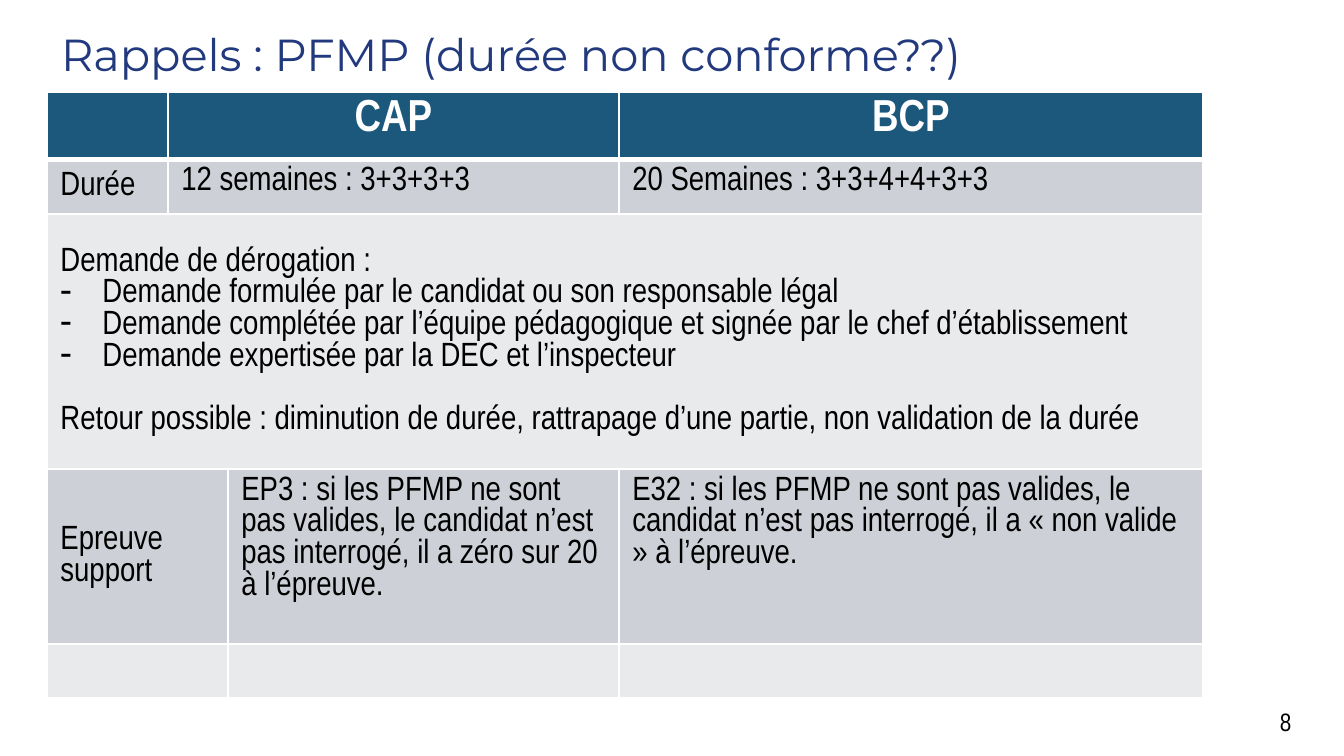
from lxml.etree import SubElement as Sub
from pptx import Presentation
from pptx.dml.color import RGBColor as Rgb
from pptx.enum.text import MSO_ANCHOR as Anchor, PP_ALIGN as Align
from pptx.oxml.ns import qn
from pptx.util import Pt

PX = 914400 / 134.4
HUES = {"title": "223A7D", "head": "1B587C", "dark": "CDD1D7",
        "light": "E8EAEC", "white": "FFFFFF", "black": "000000"}
BODY = "Arial Narrow"

COLS = [121, 60, 391, 584]
ROWS = [66, 55, 255, 175, 54]
BANDS = ["head", "dark", "light", "dark", "light"]
# first row, first column, last row, last column
SPANS = [(0, 1, 0, 2), (1, 1, 1, 2), (2, 0, 2, 3), (3, 0, 3, 1), (4, 0, 4, 1)]
CELLS = {
    (0, 1): "CAP",
    (0, 3): "BCP",
    (1, 0): "Durée",
    (1, 1): "12 semaines : 3+3+3+3",
    (1, 3): "20 Semaines : 3+3+4+4+3+3",
    (3, 0): "Epreuve support",
    (3, 2): "EP3 : si les PFMP ne sont pas valides, le candidat n’est pas "
            "interrogé, il a zéro sur 20 à l’épreuve.",
    (3, 3): "E32 : si les PFMP ne sont pas valides, le candidat n’est pas "
            "interrogé, il a « non valide » à l’épreuve.",
}
MIDDLE = [(1, 0), (2, 0), (3, 0)]
WAIVER = "Demande de dérogation :"
STEPS = [
    "Demande formulée par le candidat ou son responsable légal",
    "Demande complétée par l’équipe pédagogique et signée par le chef "
    "d’établissement",
    "Demande expertisée par la DEC et l’inspecteur",
]
RESULT = ("Retour possible : diminution de durée, rattrapage d’une partie, "
          "non validation de la durée")


def emu(px):
    return round(px * PX)


def write(para, text, size, hue="black", face=BODY, bold=False, align=None):
    run = para.add_run()
    run.text = text
    font = run.font
    font.name, font.size, font.bold = face, Pt(size), bold
    font.color.rgb = Rgb.from_string(HUES[hue])
    para.alignment = align


def label(slide, box, text, size, **look):
    frame = slide.shapes.add_textbox(*map(emu, box)).text_frame
    frame.word_wrap = True
    write(frame.paragraphs[0], text, size, **look)


def dash(para):
    """Give the paragraph a hanging dash."""
    props = para._p.get_or_add_pPr()
    props.set("marL", str(emu(42)))
    props.set("indent", str(-emu(42)))
    Sub(props, qn("a:buFontTx"))
    Sub(props, qn("a:buChar"), char="-")


def edge(cell, row):
    """Draw white borders, thicker between the head and the body."""
    props = cell._tc.get_or_add_tcPr()
    for side in "LRTB":
        thick = (row, side) in [(0, "B"), (1, "T")]
        line = Sub(props, qn(f"a:ln{side}"), w=str(Pt(3 if thick else 1)))
        fill = Sub(line, qn("a:solidFill"))
        Sub(fill, qn("a:srgbClr"), val=HUES["white"])


def waiver(frame):
    write(frame.paragraphs[0], WAIVER, 18)
    for step in STEPS:
        para = frame.add_paragraph()
        dash(para)
        write(para, step, 18)
    para = frame.add_paragraph()
    para.space_before = Pt(17)
    write(para, RESULT, 18)


def grid(slide, left, top):
    box = map(emu, (left, top, sum(COLS), sum(ROWS)))
    table = slide.shapes.add_table(len(ROWS), len(COLS), *box).table
    table.first_row = table.horz_banding = False
    for col, wide in zip(table.columns, COLS):
        col.width = emu(wide)
    for r, (row, high) in enumerate(zip(table.rows, ROWS)):
        row.height = emu(high)
        for cell in row.cells:
            edge(cell, r)
            cell.fill.solid()
            cell.fill.fore_color.rgb = Rgb.from_string(HUES[BANDS[r]])
    for r, c, last, end in SPANS:
        table.cell(r, c).merge(table.cell(last, end))
    for (r, c), text in CELLS.items():
        para = table.cell(r, c).text_frame.paragraphs[0]
        if r == 0:
            write(para, text, 24, "white", bold=True, align=Align.CENTER)
        else:
            write(para, text, 18)
    waiver(table.cell(2, 0).text_frame)
    for spot in MIDDLE:
        table.cell(*spot).vertical_anchor = Anchor.MIDDLE


def main():
    deck = Presentation()
    deck.slide_width, deck.slide_height = emu(1344), emu(756)
    slide = deck.slides.add_slide(deck.slide_layouts[6])
    label(slide, (48, 20, 1238, 67), "Rappels : PFMP (durée non conforme??)",
          24, hue="title", face="Montserrat", align=Align.JUSTIFY)
    label(slide, (1258, 700, 55, 40), "8", 13.5, align=Align.CENTER)
    grid(slide, 47, 92)
    deck.save("out.pptx")


if __name__ == "__main__":
    main()
